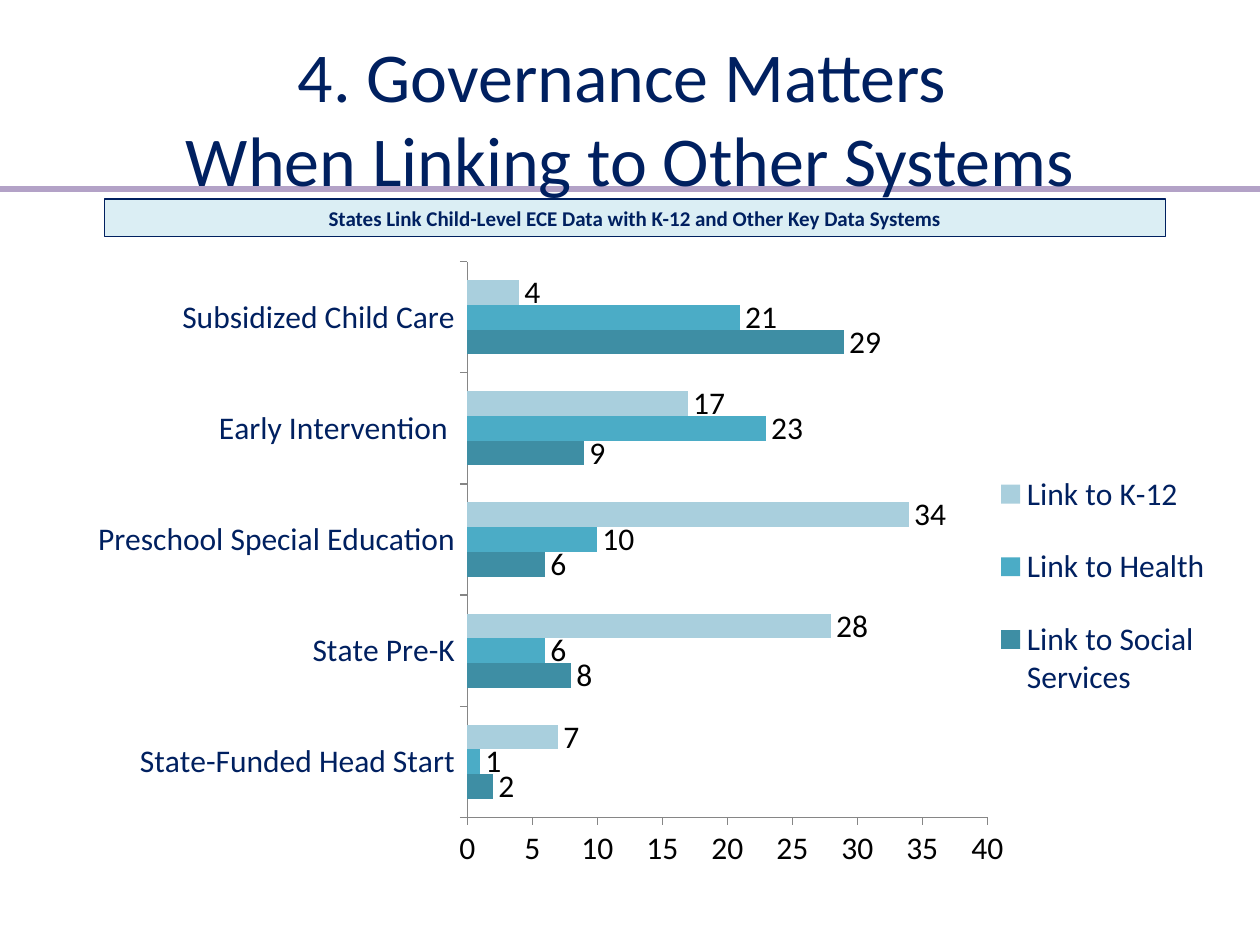
import pptx
import pptx.chart.data
import pptx.dml.color
import pptx.enum.chart
import pptx.enum.shapes
import pptx.enum.text
import pptx.oxml
import pptx.oxml.ns
import pptx.util

W, H = 10, 7.5
FONT, NAVY, BLACK, GREY = "Calibri", "002060", "000000", "868686"

TITLE = "4. Governance Matters \vWhen Linking to Other Systems"
BANNER = "States Link Child-Level ECE Data with K-12 and Other Key Data Systems"
PROGRAMS = ["State-Funded Head Start", "State Pre-K", "Preschool Special Education",
            "Early Intervention ", "Subsidized Child Care"]
LINKS = [
    ("Link to Social Services", "3E8EA4", (2, 8, 6, 9, 29)),
    ("Link to Health", "4BACC6", (1, 6, 10, 23, 21)),
    ("Link to K-12", "A9CFDD", (7, 28, 34, 17, 4)),
]
# Shares of the chart area: left, top, width, height
PLOT_BOX = (0.35, 0.03, 0.45, 0.84)
LEGEND_BOX = (0.8, 0.3, 0.2, 0.44)


def rgb(color):
    return pptx.dml.color.RGBColor.from_string(color)


def inches(*lengths):
    return [pptx.util.Inches(v) for v in lengths]


def style_font(font, size, color, bold=False):
    font.name, font.size, font.bold = FONT, pptx.util.Pt(size), bold
    font.color.rgb = rgb(color)


def style_line(line, color, width):
    line.color.rgb = rgb(color)
    line.width = pptx.util.Pt(width)


def manual_layout(box, inner=False):
    """Return a c:layout element that fixes a chart part to the given shares."""
    target = '<c:layoutTarget val="inner"/>' if inner else ""
    modes = '<c:xMode val="edge"/><c:yMode val="edge"/>'
    sizes = "".join(f'<c:{k} val="{v}"/>' for k, v in zip("xywh", box))
    return pptx.oxml.parse_xml(
        f'<c:layout {pptx.oxml.ns.nsdecls("c")}><c:manualLayout>'
        f"{target}{modes}{sizes}</c:manualLayout></c:layout>")


def add_title(slide):
    title = slide.shapes.title
    title.left, title.top, title.width, title.height = inches(0.5, 0.3, 9, 1.25)
    tf = title.text_frame
    tf.text = TITLE
    tf.word_wrap = True
    tf.auto_size = pptx.enum.text.MSO_AUTO_SIZE.NONE
    tf.vertical_anchor = pptx.enum.text.MSO_ANCHOR.MIDDLE
    p = tf.paragraphs[0]
    p.alignment = pptx.enum.text.PP_ALIGN.CENTER
    style_font(p.font, 40, NAVY)


def add_rule(slide):
    rule = slide.shapes.add_connector(
        pptx.enum.shapes.MSO_CONNECTOR.STRAIGHT, *inches(0, H / 5, W, H / 5))
    style_line(rule.line, "B3A2C7", 3.5)
    sppr = rule._element.spPr
    sppr.append(pptx.oxml.parse_xml(f'<a:effectLst {pptx.oxml.ns.nsdecls("a")}/>'))
    slide.shapes._spTree.insert(2, rule._element)  # behind the title


def add_chart(slide):
    data = pptx.chart.data.CategoryChartData()
    data.categories = PROGRAMS
    for name, _, values in LINKS:
        data.add_series(name, values)
    chart = slide.shapes.add_chart(
        pptx.enum.chart.XL_CHART_TYPE.BAR_CLUSTERED,
        *inches(0.5, 1.92, 9.17, 5.25), data).chart
    chart.has_title = False
    style_font(chart.font, 18, BLACK)

    plot = chart.plots[0]
    plot.gap_width, plot.overlap, plot.vary_by_categories = 150, 0, False
    for series, (_, color, _) in zip(plot.series, LINKS):
        series.format.fill.solid()
        series.format.fill.fore_color.rgb = rgb(color)
        labels = series.data_labels
        labels.show_value = True
        labels.position = pptx.enum.chart.XL_LABEL_POSITION.OUTSIDE_END
        style_font(labels.font, 18, BLACK)

    for axis, color in ((chart.category_axis, NAVY), (chart.value_axis, BLACK)):
        axis.major_tick_mark = pptx.enum.chart.XL_TICK_MARK.OUTSIDE
        style_line(axis.format.line, GREY, 0.75)
        style_font(axis.tick_labels.font, 18, color)
    axis = chart.value_axis
    axis.minimum_scale, axis.maximum_scale, axis.major_unit = 0, 40, 5
    style_line(axis.major_gridlines.format.line, "FFFFFF", 0.75)

    chart.has_legend = True
    legend = chart.legend
    legend.position = pptx.enum.chart.XL_LEGEND_POSITION.RIGHT
    legend.include_in_layout = False
    style_font(legend.font, 18, NAVY)

    area = chart._chartSpace.chart.plotArea
    for old in area.findall(pptx.oxml.ns.qn("c:layout")):
        area.remove(old)
    area.insert(0, manual_layout(PLOT_BOX, inner=True))
    element = legend._element
    for old in element.findall(pptx.oxml.ns.qn("c:layout")):
        element.remove(old)
    element.find(pptx.oxml.ns.qn("c:legendPos")).addnext(manual_layout(LEGEND_BOX))


def add_banner(slide):
    sp = slide.shapes.add_shape(
        pptx.enum.shapes.MSO_SHAPE.RECTANGLE, *inches(0.83, 1.58, 8.42, 0.3))
    sp.shadow.inherit = False
    sp.fill.solid()
    sp.fill.fore_color.rgb = rgb("DBEEF4")
    style_line(sp.line, NAVY, 0.75)
    tf = sp.text_frame
    tf.word_wrap = True
    tf.auto_size = pptx.enum.text.MSO_AUTO_SIZE.SHAPE_TO_FIT_TEXT
    p = tf.paragraphs[0]
    p.text = BANNER
    p.alignment = pptx.enum.text.PP_ALIGN.CENTER
    style_font(p.font, 12, NAVY, bold=True)


def main():
    prs = pptx.Presentation()
    prs.slide_width, prs.slide_height = inches(W, H)
    slide = prs.slides.add_slide(prs.slide_layouts[5])
    add_title(slide)
    add_rule(slide)
    add_chart(slide)
    add_banner(slide)
    prs.save("out.pptx")


if __name__ == "__main__":
    main()
